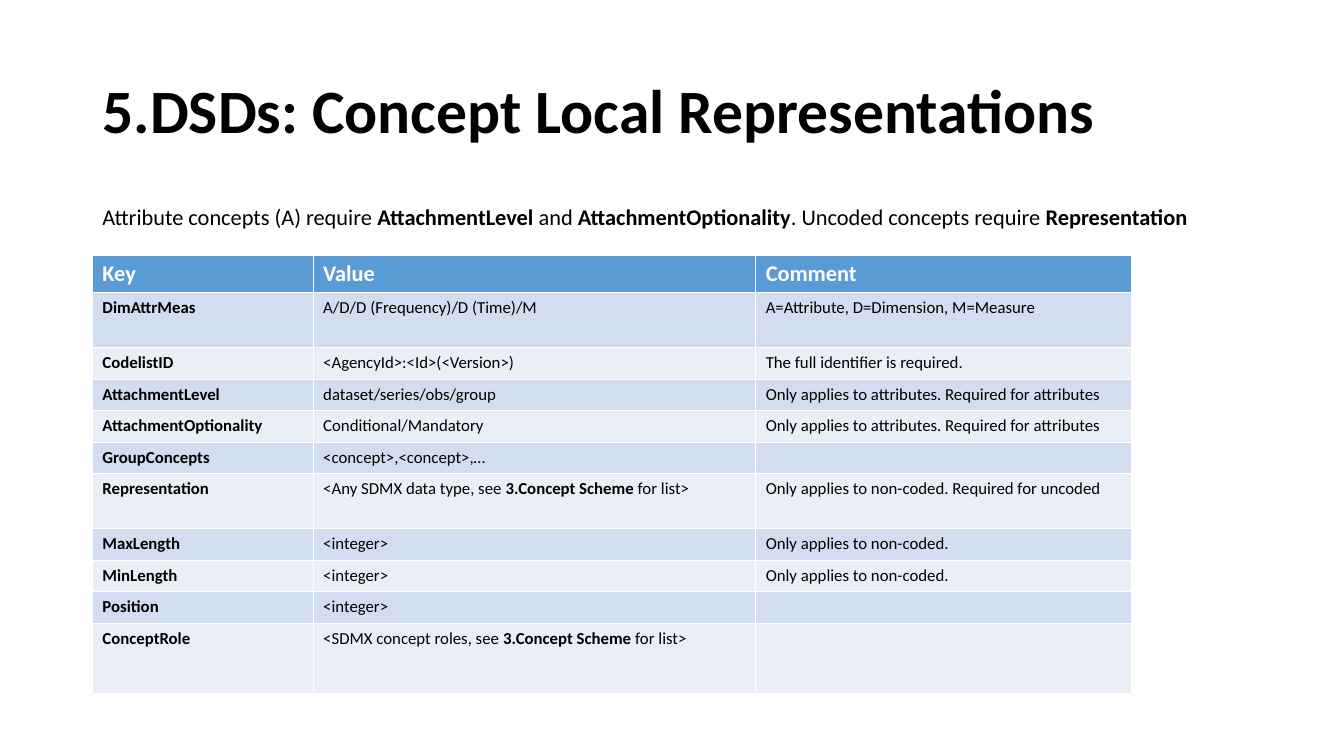
"""Build the slide on concept local representations in DSDs."""
import pptx
import pptx.dml.color
import pptx.enum.text
import pptx.util
from pptx.oxml.ns import qn

Pt = pptx.util.Pt
RGB = pptx.dml.color.RGBColor
BLACK = RGB(0x00, 0x00, 0x00)
WHITE = RGB(0xFF, 0xFF, 0xFF)
HEADER = RGB(0x5B, 0x9B, 0xD5)
BANDS = [RGB(0xEA, 0xEF, 0xF7), RGB(0xD2, 0xDE, 0xEF)]
FONT = "Calibri"

TITLE = "*5.DSDs: Concept Local Representations*"
INTRO = ("Attribute concepts (A) require *AttachmentLevel *and "
         "*AttachmentOptionality*. Uncoded concepts require *Representation*")
ROWS = [
    ("*Key*", "*Value*", "*Comment*"),
    ("*DimAttrMeas*", "A/D/D (Frequency)/D (Time)/M", "A=Attribute, D=Dimension, M=Measure"),
    ("*CodelistID*", "<AgencyId>:<Id>(<Version>)", "The full identifier is required."),
    ("*AttachmentLevel*", "dataset/series/obs/group",
     "Only applies to attributes. Required for attributes"),
    ("*AttachmentOptionality*", "Conditional/Mandatory",
     "Only applies to attributes. Required for attributes"),
    ("*GroupConcepts*", "<concept>,<concept>,…", ""),
    ("*Representation*", "<Any SDMX data type, see *3.Concept Scheme* for list>",
     "Only applies to non-coded. Required for uncoded"),
    ("*MaxLength*", "<integer>", "Only applies to non-coded."),
    ("*MinLength*", "<integer>", "Only applies to non-coded."),
    ("*Position*", "<integer>", ""),
    ("*ConceptRole*", "<SDMX concept roles, see *3.Concept Scheme *for list>", ""),
]
LEFT, WIDTH = 66, 828
COL_WIDTHS = [157.7, 316.1, 268.5]
ROW_HEIGHT = 22.5
TALL_ROWS = {0: 26.6, 1: 39.5, 6: 39.5, 10: 50}


def write(tf, text, size, color=BLACK):
    """Write text in one paragraph, with the parts between asterisks in bold."""
    p = tf.paragraphs[0]
    p.font.name, p.font.size, p.font.color.rgb = FONT, Pt(size), color
    parts = text.split("*")
    p.font.bold = len(parts) == 3 and not parts[0] and not parts[2]
    for i, part in enumerate(parts):
        if part:
            r = p.add_run()
            r.text = part
            if len(parts) > 3 or parts[0]:
                r.font.bold = i % 2 == 1
    if not text:
        p._p.get_or_add_endParaRPr().set("sz", str(size * 100))
    return p


def add_table(s):
    """Add the table of keys, values and comments."""
    heights = [TALL_ROWS.get(i, ROW_HEIGHT) for i in range(len(ROWS))]
    table = s.shapes.add_table(len(ROWS), len(COL_WIDTHS), Pt(LEFT), Pt(182.3),
                               Pt(sum(COL_WIDTHS)), Pt(sum(heights))).table
    for column, width in zip(table.columns, COL_WIDTHS):
        column.width = Pt(width)
    for i, (row, height) in enumerate(zip(ROWS, heights)):
        table.rows[i].height = Pt(height)
        for j, text in enumerate(row):
            cell = table.cell(i, j)
            cell.fill.solid()
            cell.fill.fore_color.rgb = BANDS[i % 2] if i else HEADER
            write(cell.text_frame, text, 12 if i else 16, BLACK if i else WHITE)


def main():
    """Build and save the slide."""
    prs = pptx.Presentation()
    prs.slide_width, prs.slide_height = Pt(960), Pt(540)
    s = prs.slides.add_slide(prs.slide_layouts[5])

    title = s.shapes.title
    title.left, title.top, title.width, title.height = Pt(LEFT), Pt(28.8), Pt(WIDTH), Pt(104.4)
    title.text_frame.vertical_anchor = pptx.enum.text.MSO_ANCHOR.MIDDLE
    p = write(title.text_frame, TITLE, 44)
    p.alignment = pptx.enum.text.PP_ALIGN.LEFT
    p.line_spacing = 0.9

    intro = s.shapes.add_textbox(Pt(LEFT), Pt(144), Pt(WIDTH), Pt(366.5))
    intro.text_frame.word_wrap = True
    p = write(intro.text_frame, INTRO, 16)
    p.line_spacing = 0.9
    p.space_before = Pt(10)

    add_table(s)
    prs.save("out.pptx")


if __name__ == "__main__":
    main()
